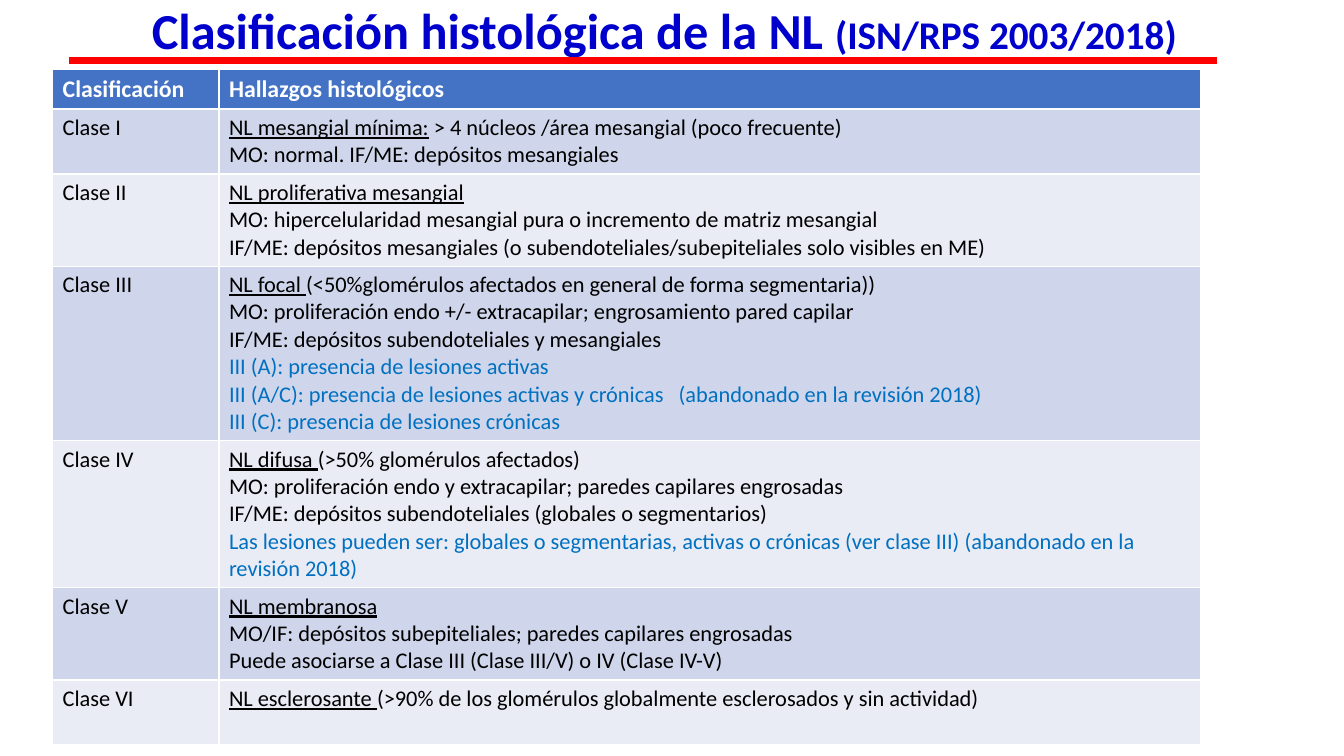
from lxml import etree
from pptx import Presentation
from pptx.dml.color import RGBColor
from pptx.enum import shapes, text
from pptx.oxml import ns
from pptx.util import Pt

FONT = "Calibri"
COLOURS = {
    "title": "0000CC",
    "rule": "FF0000",
    "header": "4472C4",
    "header_text": "FFFFFF",
    "odd_row": "CFD5EA",
    "even_row": "E9EBF5",
    "text": "000000",
    "revised": "0070C0",
}
HEADINGS = ("Clasificación", "Hallazgos histológicos")
COLUMN_WIDTHS = (118.8, 701.3)
HEADER_HEIGHT, LINE_HEIGHT, CELL_MARGINS = 27.4, 19.5, 7.2

# class, underlined name, rest of its line, findings, revised findings, lines in the row
CLASSES = [
    ("Clase I", "NL mesangial mínima:", " > 4 núcleos /área mesangial (poco frecuente)",
     ["MO: normal. IF/ME: depósitos mesangiales"], [], 2),
    ("Clase II", "NL proliferativa mesangial", "",
     ["MO: hipercelularidad mesangial pura o incremento de matriz mesangial",
      "IF/ME: depósitos mesangiales (o subendoteliales/subepiteliales solo visibles en ME)"],
     [], 3),
    ("Clase III", "NL focal ", "(<50%glomérulos afectados en general de forma segmentaria))",
     ["MO: proliferación endo +/- extracapilar; engrosamiento pared capilar",
      "IF/ME: depósitos subendoteliales y mesangiales"],
     ["III (A): presencia de lesiones activas",
      "III (A/C): presencia de lesiones activas y crónicas   (abandonado en la revisión 2018)",
      "III (C): presencia de lesiones crónicas"], 6),
    ("Clase IV", "NL difusa ", "(>50% glomérulos afectados)",
     ["MO: proliferación endo y extracapilar; paredes capilares engrosadas",
      "IF/ME: depósitos subendoteliales (globales o segmentarios)"],
     ["Las lesiones pueden ser: globales o segmentarias, activas o crónicas "
      "(ver clase III) (abandonado en la revisión 2018)"], 5),
    ("Clase V", "NL membranosa", "",
     ["MO/IF: depósitos subepiteliales; paredes capilares engrosadas",
      "Puede asociarse a Clase III (Clase III/V) o IV (Clase IV-V)"], [], 3),
    ("Clase VI", "NL esclerosante ",
     "(>90% de los glomérulos globalmente esclerosados y sin actividad)", [], [], 2),
]


def colour(name):
    return RGBColor.from_string(COLOURS[name])


def style(font, size, colour_name, bold=False):
    font.name = FONT
    font.size = Pt(size)
    font.bold = bold
    font.color.rgb = colour(colour_name)


def fill_cell(cell, colour_name):
    cell.fill.solid()
    cell.fill.fore_color.rgb = colour(colour_name)


def add_title(slide):
    title = slide.shapes.title
    title.left, title.top, title.width, title.height = Pt(75), Pt(-4.5), Pt(799), Pt(43.2)
    frame = title.text_frame
    frame.auto_size = text.MSO_AUTO_SIZE.NONE
    frame.vertical_anchor = text.MSO_ANCHOR.TOP
    heading = frame.paragraphs[0]
    heading.alignment = text.PP_ALIGN.CENTER
    for words, size in (("Clasificación histológica de la NL ", 36),
                        ("(ISN/RPS 2003/2018)", 28)):
        run = heading.add_run()
        run.text = words
        style(run.font, size, "title", bold=True)


def add_title_rule(slide):
    rule = slide.shapes.add_connector(
        shapes.MSO_CONNECTOR.STRAIGHT, Pt(49), Pt(43.2), Pt(869), Pt(43.2))
    rule.line.color.rgb = colour("rule")
    rule.line.width = Pt(4.5)
    etree.SubElement(rule._element.spPr, ns.qn("a:effectLst"))


def write_findings(frame, name, detail, findings, revised):
    first = frame.paragraphs[0]
    name_run = first.add_run()
    name_run.text = name
    name_run.font.underline = True
    if detail:
        first.add_run().text = detail
    style(first.font, 16, "text")
    for lines, colour_name in ((findings, "text"), (revised, "revised")):
        for line in lines:
            paragraph = frame.add_paragraph()
            paragraph.text = line
            style(paragraph.font, 16, colour_name)


def add_class_table(slide):
    heights = [HEADER_HEIGHT] + [CELL_MARGINS + LINE_HEIGHT * entry[-1] for entry in CLASSES]
    table = slide.shapes.add_table(
        len(heights), len(HEADINGS), Pt(37.6), Pt(49.9),
        Pt(sum(COLUMN_WIDTHS)), Pt(sum(heights))).table
    for column, width in zip(table.columns, COLUMN_WIDTHS):
        column.width = Pt(width)
    for row, height in zip(table.rows, heights):
        row.height = Pt(height)

    for cell, heading in zip(table.rows[0].cells, HEADINGS):
        fill_cell(cell, "header")
        cell.text = heading
        style(cell.text_frame.paragraphs[0].font, 17, "header_text", bold=True)

    for number, (label, *content, _) in enumerate(CLASSES, start=1):
        label_cell, findings_cell = table.rows[number].cells
        for cell in (label_cell, findings_cell):
            fill_cell(cell, "odd_row" if number % 2 else "even_row")
        label_cell.text = label
        style(label_cell.text_frame.paragraphs[0].font, 16, "text")
        write_findings(findings_cell.text_frame, *content)


def main():
    deck = Presentation()
    deck.slide_width, deck.slide_height = Pt(960), Pt(540)
    slide = deck.slides.add_slide(deck.slide_layouts.get_by_name("Title Only"))
    add_class_table(slide)
    add_title_rule(slide)
    add_title(slide)
    deck.save("out.pptx")


if __name__ == "__main__":
    main()
